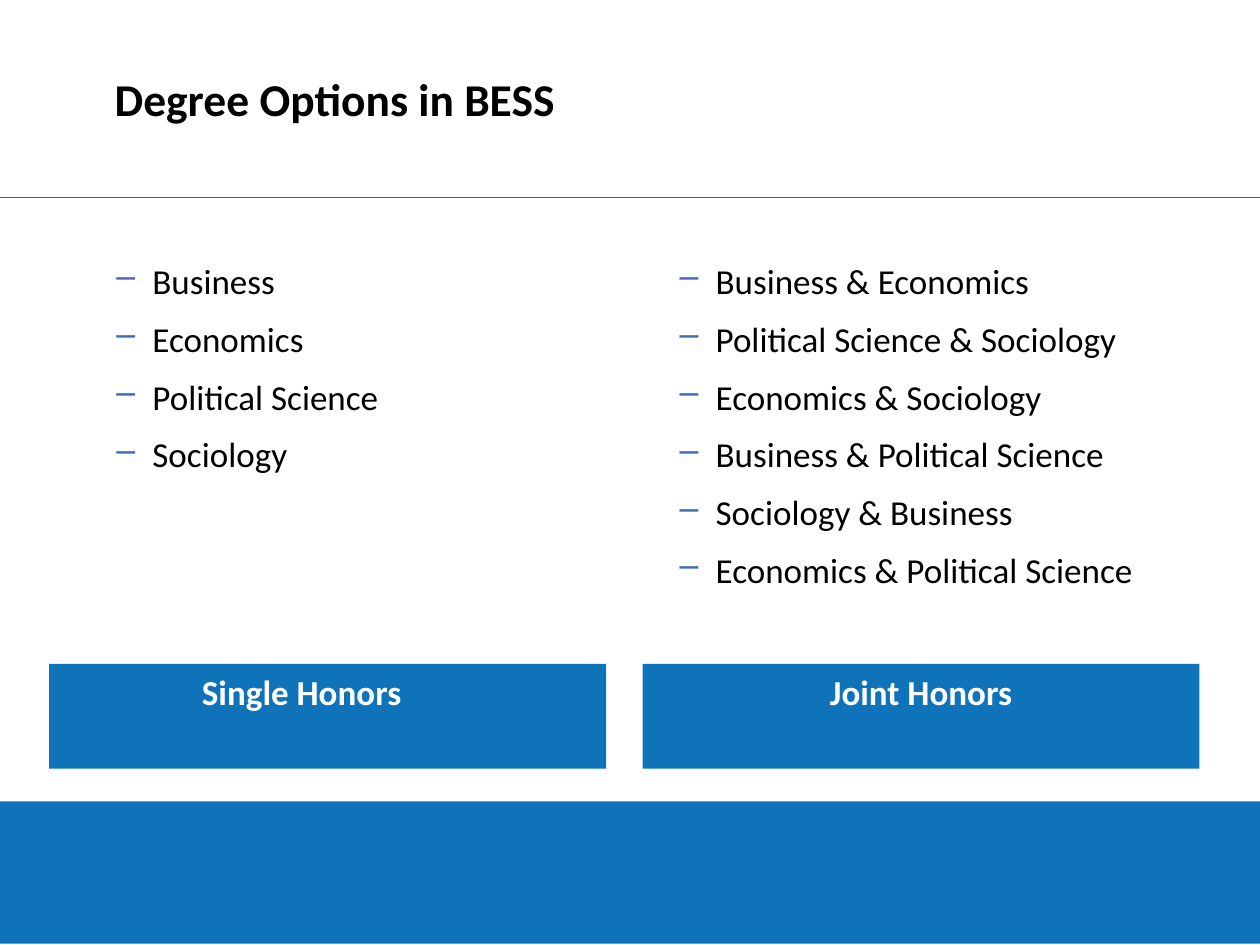
from lxml import etree
from pptx import Presentation
from pptx.dml.color import RGBColor
from pptx.enum.shapes import MSO_CONNECTOR, MSO_SHAPE
from pptx.enum.text import MSO_ANCHOR, PP_ALIGN
from pptx.oxml.ns import qn
from pptx.util import Inches, Pt

BLUE = RGBColor(0x0E, 0x73, 0xB9)
DASH_BLUE = RGBColor(0x3E, 0x6D, 0xB2)
BLACK = RGBColor(0, 0, 0)
WHITE = RGBColor(0xFF, 0xFF, 0xFF)
RECTANGLE = MSO_SHAPE.RECTANGLE
STRAIGHT = MSO_CONNECTOR.STRAIGHT
TOP, BOTTOM = MSO_ANCHOR.TOP, MSO_ANCHOR.BOTTOM
LEFT, CENTER = PP_ALIGN.LEFT, PP_ALIGN.CENTER

# list left, band left, extra right inset of the band, heading, options
COLUMNS = [
    (0.91, 0.39, 0.41, "Single Honors",
     ["Business", "Economics", "Political Science", "Sociology"]),
    (5.38, 5.1, 0, "Joint Honors",
     ["Business & Economics", "Political Science & Sociology",
      "Economics & Sociology", "Business & Political Science",
      "Sociology & Business", "Economics & Political Science"]),
]


def add_band(left, top, width, height):
    band = slide.shapes.add_shape(
        RECTANGLE, Inches(left), Inches(top), Inches(width), Inches(height))
    band.shadow.inherit = False
    band.fill.solid()
    band.fill.fore_color.rgb = BLUE
    band.line.fill.background()
    return band


def format_text(para, size, color, bold=False):
    for span in para.runs:
        span.font.name = "Calibri"
        span.font.size = Pt(size)
        span.font.bold = bold
        span.font.color.rgb = color


deck = Presentation()
deck.slide_width, deck.slide_height = Inches(10), Inches(7.5)
slide = deck.slides.add_slide(deck.slide_layouts[5])

add_band(0, 6.36, 10, 1.13)
rule = slide.shapes.add_connector(
    STRAIGHT, Inches(0), Inches(1.57), Inches(10), Inches(1.57))
rule.line.color.rgb = BLUE
rule.line.width = Pt(0.75)
etree.SubElement(rule._element.spPr, qn("a:effectLst"))

title = slide.shapes.title
title.left, title.top = Inches(0.91), Inches(0.39)
title.width, title.height = Inches(8.2), Inches(0.61)
frame = title.text_frame
frame.margin_left = frame.margin_right = frame.margin_top = frame.margin_bottom = 0
frame.vertical_anchor = BOTTOM
frame.text = "Degree Options in BESS"
frame.paragraphs[0].alignment = LEFT
format_text(frame.paragraphs[0], 26, BLACK, bold=True)

for list_left, band_left, extra_inset, heading, options in COLUMNS:
    box = slide.shapes.add_textbox(
        Inches(list_left), Inches(2.06), Inches(4.3), Inches(3.46))
    frame = box.text_frame
    frame.word_wrap = True
    frame.margin_left = frame.margin_right = frame.margin_top = frame.margin_bottom = 0
    frame.text = "\n".join(options)
    for index, para in enumerate(frame.paragraphs):
        properties = para._p.get_or_add_pPr()
        properties.set("marL", str(Inches(0.3)))
        properties.set("indent", str(Inches(-0.3)))
        bullet_color = etree.SubElement(properties, qn("a:buClr"))
        etree.SubElement(bullet_color, qn("a:srgbClr"), val=str(DASH_BLUE))
        etree.SubElement(properties, qn("a:buChar"), char="‒")
        if index:
            para.space_before = Pt(9)
        format_text(para, 20, BLACK)

    band = add_band(band_left, 5.27, 4.42, 0.83)
    frame = band.text_frame
    frame.vertical_anchor = TOP
    frame.margin_right = Inches(0.1 + extra_inset)
    frame.text = heading
    frame.paragraphs[0].alignment = CENTER
    format_text(frame.paragraphs[0], 20, WHITE, bold=True)

deck.save("out.pptx")
